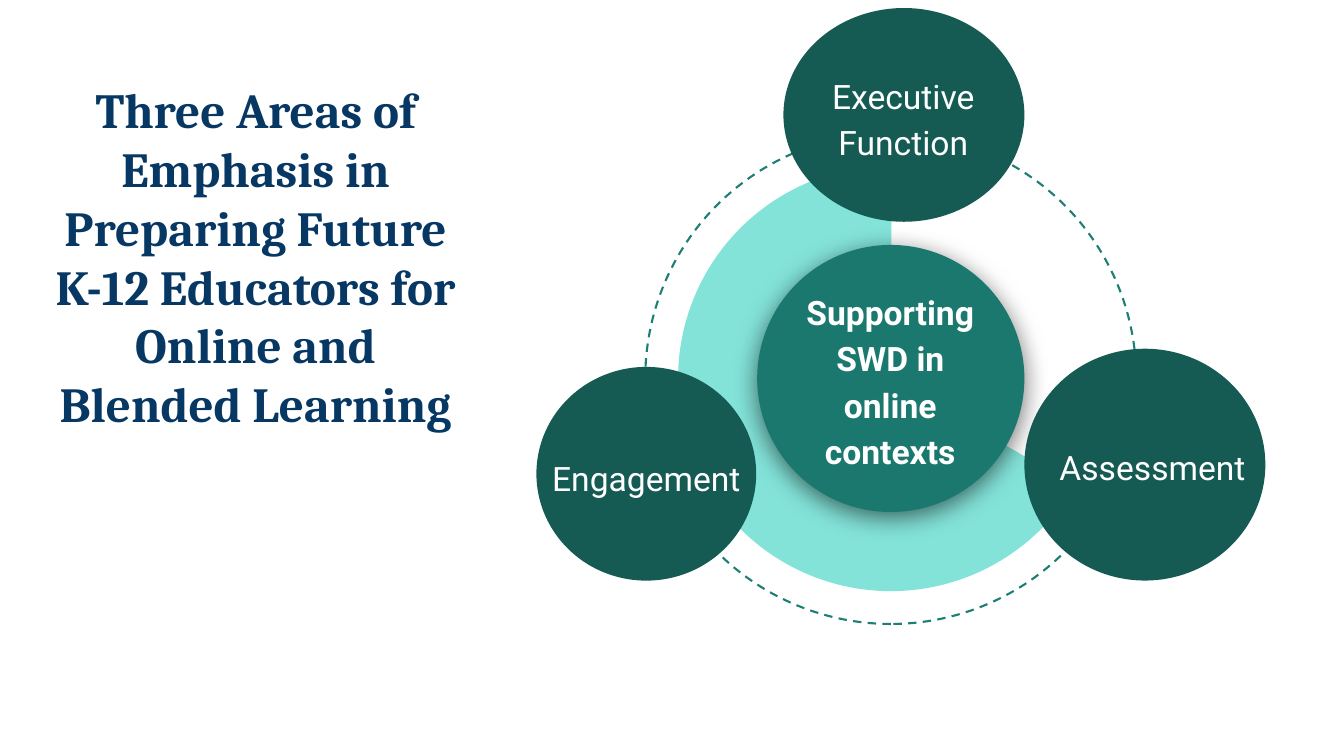
from lxml.etree import SubElement
from pptx import Presentation
from pptx.dml.color import RGBColor
from pptx.enum.dml import MSO_LINE
from pptx.enum.shapes import MSO_SHAPE
from pptx.enum.text import MSO_ANCHOR, MSO_AUTO_SIZE, PP_ALIGN
from pptx.oxml.ns import qn
from pptx.util import Inches, Pt

TITLE = "Three Areas of Emphasis in Preparing Future K-12 Educators for Online and Blended Learning"
TITLE_BOX = (0.29, 0.69, 4.49, 6.13)
CENTER = (8.835, 3.755)
RING, PIE, HUB = 4.87, 4.22, 2.65
HUB_TEXT = ("Supporting\vSWD in\vonline\vcontexts", (7.85, 3.15, 1.96, 1.21))
AREAS = [
    ("Executive\vFunction", (7.77, 0.08, 2.39, 2.12), (8.11, 0.42, 1.7, 1.46)),
    ("Engagement", (5.32, 3.64, 2.18, 2.12), (5.32, 3.98, 2.18, 1.46)),
    ("Assessment", (10.16, 3.46, 2.39, 2.3), (10.34, 3.82, 2.18, 1.57)),
]


def color(value):
    return RGBColor.from_string(value)


def centered(size):
    return CENTER[0] - size / 2, CENTER[1] - size / 2, size, size


def add_shape(kind, box, fill=None):
    sp = s.shapes.add_shape(kind, *map(Inches, box))
    sp.shadow.inherit = False
    sp.line.fill.background()
    if fill:
        sp.fill.solid()
        sp.fill.fore_color.rgb = color(fill)
    else:
        sp.fill.background()
    return sp


def write(sp, text, font="Roboto", size=24, fill="FFFFFF", bold=False,
          inset=0.13, anchor=MSO_ANCHOR.MIDDLE, spacing=1.15):
    tf = sp.text_frame
    tf.word_wrap = True
    tf.auto_size = MSO_AUTO_SIZE.NONE
    tf.vertical_anchor = anchor
    tf.margin_left = tf.margin_right = tf.margin_top = tf.margin_bottom = Inches(inset)
    p = tf.paragraphs[0]
    p.text = text
    p.alignment = PP_ALIGN.CENTER
    p.line_spacing = spacing
    for r in p.runs:
        r.font.name = font
        r.font.size = Pt(size)
        r.font.bold = bold
        r.font.color.rgb = color(fill)


def add_label(text, box, **style):
    write(s.shapes.add_textbox(*map(Inches, box)), text, **style)


def add_glow(sp):
    effects = sp.element.spPr.find(qn("a:effectLst"))
    shadow = SubElement(effects, qn("a:outerShdw"), blurRad=str(Pt(18)),
                        dist=str(Pt(4)), dir="5400000", algn="bl", rotWithShape="0")
    black = SubElement(shadow, qn("a:srgbClr"), val="000000")
    SubElement(black, qn("a:alpha"), val="55000")


prs = Presentation()
prs.slide_width, prs.slide_height = Inches(13.33), Inches(7.5)
s = prs.slides.add_slide(prs.slide_layouts[5])

title = s.shapes.title
title.left, title.top, title.width, title.height = map(Inches, TITLE_BOX)
write(title, TITLE, font="Cambria", size=35, fill="073763", bold=True,
      inset=0.1, anchor=MSO_ANCHOR.TOP, spacing=1.0)

ring = add_shape(MSO_SHAPE.OVAL, centered(RING))
ring.rotation = 270
ring.line.color.rgb = color("1D7E74")
ring.line.width = Pt(1.5)
ring.line.dash_style = MSO_LINE.DASH

pie = add_shape(MSO_SHAPE.PIE, centered(PIE), "83E3D9")
for i, degrees in enumerate((30.19, 270.25)):
    pie.adjustments[i] = degrees * 0.6

add_glow(add_shape(MSO_SHAPE.OVAL, centered(HUB), "1B786E"))
add_label(*HUB_TEXT, bold=True)

for text, circle, box in AREAS:
    add_shape(MSO_SHAPE.OVAL, circle, "155B54")
    add_label(text, box)

prs.save("out.pptx")
